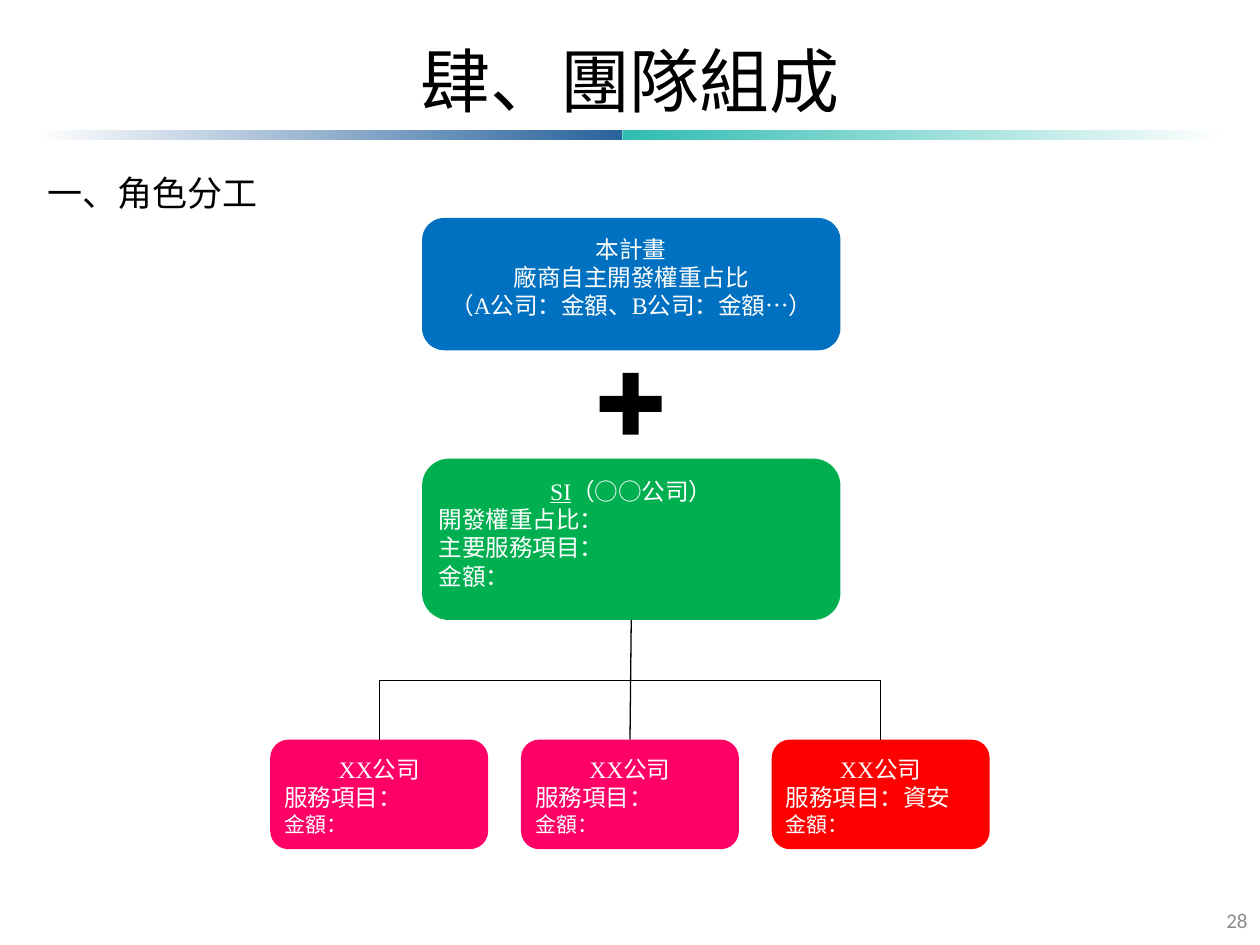
"""Build the team composition slide with its role chart."""
import pptx
import pptx.dml.color
import pptx.enum.shapes
import pptx.enum.text
import pptx.oxml.ns
import pptx.util
from lxml import etree

Inches = pptx.util.Inches
SHAPE = pptx.enum.shapes.MSO_SHAPE
ALIGN = pptx.enum.text.PP_ALIGN
MIDDLE = pptx.enum.text.MSO_ANCHOR.MIDDLE

TITLE = "肆、團隊組成"
HEADING = "一、角色分工"
PAGE = "28"
RULES = [
    (0.28, 4.66, ("FFFFFF", "28629C")),
    (4.94, 4.78, ("2FBCB2", "FFFFFF")),
]
PROJECT = ["本計畫", "廠商自主開發權重占比", "（A公司：金額、B公司：金額…）"]
INTEGRATOR = [[("SI", True), ("（○○公司）", False)],
              "開發權重占比：", "主要服務項目：", "金額："]
PARTNERS = [
    ("FF0066", ["XX公司", "服務項目：", "金額："]),
    ("FF0066", ["XX公司", "服務項目：", "金額："]),
    ("FF0000", ["XX公司", "服務項目：資安", "金額："]),
]
PARTNER_WIDTH, PARTNER_TOP, PARTNER_PITCH = 1.73, 5.87, 1.99
BUS_Y = 5.4


def rgb(value):
    return pptx.dml.color.RGBColor.from_string(value)


def write(frame, lines, sizes=(13.5,), aligns=(ALIGN.CENTER,), color="FFFFFF",
          font="Times New Roman", anchor=None, insets=None):
    """Fill a frame; the last size and alignment serve all further lines."""
    frame.word_wrap = True
    if anchor is not None:
        frame.vertical_anchor = anchor
    if insets:
        (frame.margin_left, frame.margin_top,
         frame.margin_right, frame.margin_bottom) = map(Inches, insets)
    for i, line in enumerate(lines):
        paragraph = frame.paragraphs[0] if i == 0 else frame.add_paragraph()
        paragraph.alignment = aligns[min(i, len(aligns) - 1)]
        runs = [(line, False)] if isinstance(line, str) else line
        for text, underlined in runs:
            run = paragraph.add_run()
            run.text = text
            run.font.name = font
            run.font.size = pptx.util.Pt(sizes[min(i, len(sizes) - 1)])
            run.font.color.rgb = rgb(color)
            if underlined:
                run.font.underline = True


def add_block(shapes, kind, box, color):
    block = shapes.add_shape(kind, *map(Inches, box))
    block.shadow.inherit = False
    block.fill.solid()
    block.fill.fore_color.rgb = rgb(color)
    block.line.fill.background()
    return block


def add_card(shapes, box, color, lines, **text_format):
    card = add_block(shapes, SHAPE.ROUNDED_RECTANGLE, box, color)
    write(card.text_frame, lines, anchor=pptx.enum.text.MSO_ANCHOR.TOP,
          insets=(0.07, 0.08, 0.07, 0.04), **text_format)
    return card


def add_line(shapes, start, end):
    line = shapes.add_connector(pptx.enum.shapes.MSO_CONNECTOR.STRAIGHT, *start, *end)
    line.line.color.rgb = rgb("000000")
    line.line.width = pptx.util.Pt(0.75)
    etree.SubElement(line.line._get_or_add_ln().getparent(),
                     pptx.oxml.ns.qn("a:effectLst"))
    return line


def main():
    deck = pptx.Presentation()
    deck.slide_width, deck.slide_height = Inches(10), Inches(7.5)
    slide = deck.slides.add_slide(deck.slide_layouts[5])
    shapes = slide.shapes

    for left, width, colors in RULES:
        rule = add_block(shapes, SHAPE.RECTANGLE, (left, 1.03, width, 0.08), colors[0])
        rule.fill.gradient()
        rule.fill.gradient_angle = 0
        for stop, color, position in zip(rule.fill.gradient_stops, colors, (0, 1)):
            stop.color.rgb = rgb(color)
            stop.position = position

    title = shapes.title
    title.left, title.top, title.width, title.height = map(Inches, (0.5, 0.13, 9, 1.01))
    write(title.text_frame, [TITLE], sizes=(40,), color="000000", anchor=MIDDLE)
    heading = shapes.add_textbox(*map(Inches, (0.28, 1.31, 9, 0.44)))
    write(heading.text_frame, [HEADING], sizes=(20,), aligns=(ALIGN.JUSTIFY,),
          color="000000")

    add_card(shapes, (3.35, 1.73, 3.32, 1.05), "0070C0", PROJECT)
    plus = add_block(shapes, SHAPE.CROSS, (4.76, 2.96, 0.49, 0.49), "000000")
    plus.adjustments[0] = 0.37
    head_then_left = (ALIGN.CENTER, ALIGN.LEFT)
    integrator = add_card(shapes, (3.35, 3.64, 3.32, 1.28), "00B050", INTEGRATOR,
                          aligns=head_then_left)

    first_left = (10 - PARTNER_WIDTH) / 2 - PARTNER_PITCH
    partners = [
        add_card(shapes, (first_left + i * PARTNER_PITCH, PARTNER_TOP, PARTNER_WIDTH, 0.87),
                 color, lines, sizes=(13.5, 13.5, 12), aligns=head_then_left)
        for i, (color, lines) in enumerate(PARTNERS)
    ]

    centers = [partner.left + partner.width // 2 for partner in partners]
    bus_y = Inches(BUS_Y)
    add_line(shapes, (centers[0], bus_y), (centers[-1], bus_y))
    for partner, center in zip(partners, centers):
        drop = add_line(shapes, (center, bus_y), (center, partner.top))
        if partner is partners[1]:
            drop.begin_connect(integrator, 2)
        drop.end_connect(partner, 0)

    page = shapes.add_textbox(*map(Inches, (7.67, 7.1, 2.33, 0.4)))
    write(page.text_frame, [PAGE], sizes=(12,), aligns=(ALIGN.RIGHT,),
          color="8C8C8C", font="Calibri", anchor=MIDDLE)
    deck.save("out.pptx")


if __name__ == "__main__":
    main()
